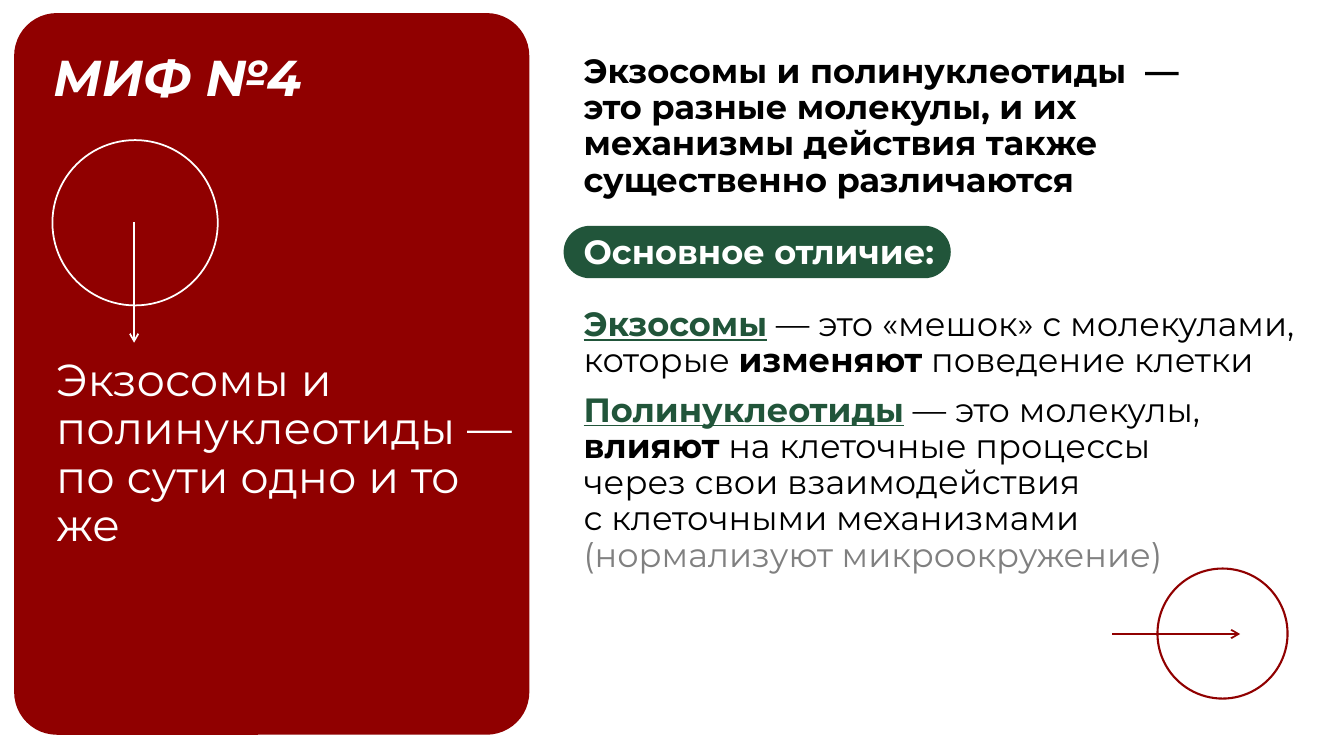
import pptx
import pptx.util
import pptx.dml.color
import pptx.enum.shapes
import pptx.oxml
import pptx.oxml.ns
from pptx.util import Inches

COLORS = {"red": "900000", "green": "21553A", "white": "FFFFFF",
          "black": "000000", "gray": "808080"}
RGB = {k: pptx.dml.color.RGBColor.from_string(v) for k, v in COLORS.items()}
SHAPE = pptx.enum.shapes.MSO_SHAPE

prs = pptx.Presentation()
prs.slide_width = Inches(13.33)
prs.slide_height = Inches(7.5)
s = prs.slides.add_slide(prs.slide_layouts[6])


def add_text(box, size, paragraphs, spacing=0.9):
    tf = s.shapes.add_textbox(*map(Inches, box)).text_frame
    tf.word_wrap = True
    for i, runs in enumerate(paragraphs):
        p = tf.add_paragraph() if i else tf.paragraphs[0]
        p.line_spacing = spacing
        for text, color, style in runs:
            for j, line in enumerate(text.split("\n")):
                if j:
                    p.add_line_break()
                if not line:
                    continue
                r = p.add_run()
                r.text = line
                r.font.name = "Montserrat"
                r.font.size = pptx.util.Pt(size)
                r.font.color.rgb = RGB[color]
                r.font.bold = "b" in style
                r.font.italic = "i" in style
                r.font.underline = "u" in style


panels = [
    ((0.14, 0.13, 5.11, 7.16), 0.083, "red"),
    ((5.59, 2.24, 3.84, 0.52), 0.5, "green"),
]
for box, radius, color in panels:
    sp = s.shapes.add_shape(SHAPE.ROUNDED_RECTANGLE, *map(Inches, box))
    sp.adjustments[0] = radius
    sp.shadow.inherit = False
    sp.fill.solid()
    sp.fill.fore_color.rgb = RGB[color]
    sp.line.fill.background()

circles = [(0.52, 1.39, 1.64, "white", 1.25), (11.48, 5.64, 1.29, "red", 1.5)]
for left, top, diameter, color, width in circles:
    sp = s.shapes.add_shape(SHAPE.OVAL, Inches(left), Inches(top),
                            Inches(diameter), Inches(diameter))
    sp.shadow.inherit = False
    sp.fill.background()
    sp.line.color.rgb = RGB[color]
    sp.line.width = pptx.util.Pt(width)

arrows = [((1.33, 2.2, 1.33, 3.4), "white"), ((11.03, 6.29, 12.3, 6.29), "red")]
for ends, color in arrows:
    arrow = s.shapes.add_connector(
        pptx.enum.shapes.MSO_CONNECTOR.STRAIGHT, *map(Inches, ends))
    arrow.line.color.rgb = RGB[color]
    arrow.line.width = pptx.util.Pt(1.25)
    ns = pptx.oxml.ns.nsdecls("a")
    arrow.line._get_or_add_ln().append(
        pptx.oxml.parse_xml(f'<a:tailEnd {ns} type="arrow"/>'))
    arrow._element.spPr.append(pptx.oxml.parse_xml(f"<a:effectLst {ns}/>"))

add_text((0.43, 0.41, 3, 0.71), 36, [[("МИФ №4", "white", "bi")]], 1.0)
add_text((0.46, 3.5, 4.9, 2.04), 32, [
    [("Экзосомы и полинуклеотиды — по сути одно и то же", "white", "")],
])
add_text((5.69, 0.49, 6.67, 1.56), 24, [
    [("Экзосомы и полинуклеотиды  —", "black", "b")],
    [("это разные молекулы, и их механизмы действия также "
      "существенно различаются", "black", "b")],
])
add_text((5.69, 2.29, 6.67, 0.46), 24, [[("Основное отличие:", "white", "b")]])
add_text((5.69, 3, 7.51, 0.83), 24, [[
    ("Экзосомы", "green", "bu"),
    (" — это «мешок» с молекулами,\nкоторые ", "black", ""),
    ("изменяют", "black", "b"),
    (" поведение клетки", "black", ""),
]])
add_text((5.69, 3.85, 6.67, 1.92), 24, [[
    ("Полинуклеотиды", "green", "bu"),
    (" — это молекулы,\n", "black", ""),
    ("влияют", "black", "b"),
    (" на клеточные процессы через свои взаимодействия\n"
     "с клеточными механизмами ", "black", ""),
    ("(нормализуют микроокружение)", "gray", ""),
]])

prs.save("out.pptx")
